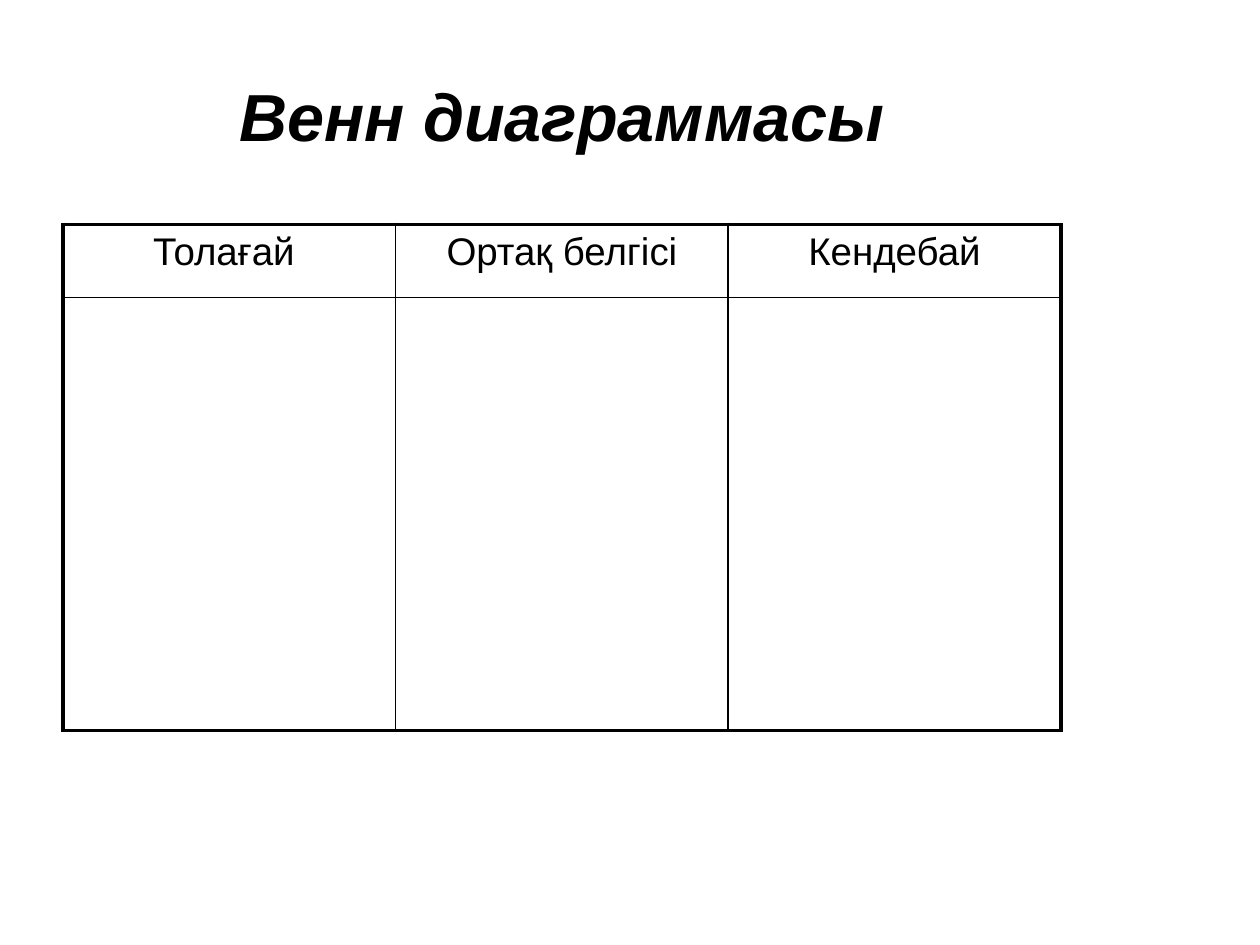
from lxml.etree import SubElement
from pptx import Presentation
from pptx.dml.color import RGBColor
from pptx.enum.text import MSO_ANCHOR, PP_ALIGN
from pptx.oxml.ns import qn
from pptx.util import Inches, Pt

COLORS = {"ink": "000000", "paper": "FFFFFF"}
FONT = "Arial"
LEFT, WIDTH = 0.5, 7.92
HEADINGS = ["Толағай ", "Ортақ белгісі", "Кендебай"]
ROW_HEIGHTS = [0.58, 3.44]
OUTER_LINE, INNER_LINE = 2.25, 1


def style_paragraph(para, size, bold=False, italic=False):
    para.alignment = PP_ALIGN.CENTER
    font = para.font
    font.name = FONT
    font.size = Pt(size)
    font.bold = bold
    font.italic = italic
    font.color.rgb = RGBColor.from_string(COLORS["ink"])


def add_title(page, text):
    title = page.shapes.title
    title.left, title.top = Inches(LEFT), Inches(0.35)
    title.width, title.height = Inches(WIDTH), Inches(0.88)
    frame = title.text_frame
    frame.text = text
    frame.word_wrap = True
    frame.vertical_anchor = MSO_ANCHOR.BOTTOM
    frame.margin_left = frame.margin_right = Inches(0.05)
    frame.margin_top = frame.margin_bottom = 0
    style_paragraph(frame.paragraphs[0], 38, bold=True, italic=True)


def set_borders(cell, widths):
    """Draw the cell's sides; widths maps L, R, T, B (in that order) to points."""
    properties = cell._tc.get_or_add_tcPr()
    for index, (side, width) in enumerate(widths.items()):
        line = properties.makeelement(qn(f"a:ln{side}"), {"w": str(Pt(width))})
        fill = SubElement(line, qn("a:solidFill"))
        SubElement(fill, qn("a:srgbClr"), val=COLORS["ink"])
        properties.insert(index, line)


def add_comparison_table(page):
    row_count, column_count = len(ROW_HEIGHTS), len(HEADINGS)
    table = page.shapes.add_table(
        row_count, column_count, Inches(LEFT), Inches(1.78),
        Inches(WIDTH), Inches(sum(ROW_HEIGHTS))).table
    table.first_row = table.horz_banding = False
    for column in table.columns:
        column.width = Inches(WIDTH / column_count)
    for row, height in zip(table.rows, ROW_HEIGHTS):
        row.height = Inches(height)

    for cell, heading in zip(table.rows[0].cells, HEADINGS):
        cell.text = heading
        style_paragraph(cell.text_frame.paragraphs[0], 22)

    for r, row in enumerate(table.rows):
        for c, cell in enumerate(row.cells):
            cell.fill.background()
            on_edge = {"L": c == 0, "R": c == column_count - 1,
                       "T": r == 0, "B": r == row_count - 1}
            set_borders(cell, {side: OUTER_LINE if edge else INNER_LINE
                               for side, edge in on_edge.items()})


def main():
    deck = Presentation()
    deck.slide_width, deck.slide_height = Inches(10), Inches(7.5)
    page = deck.slides.add_slide(deck.slide_layouts[5])
    page.background.fill.solid()
    page.background.fill.fore_color.rgb = RGBColor.from_string(COLORS["paper"])
    add_title(page, "Венн диаграммасы")
    add_comparison_table(page)
    deck.save("out.pptx")


if __name__ == "__main__":
    main()
